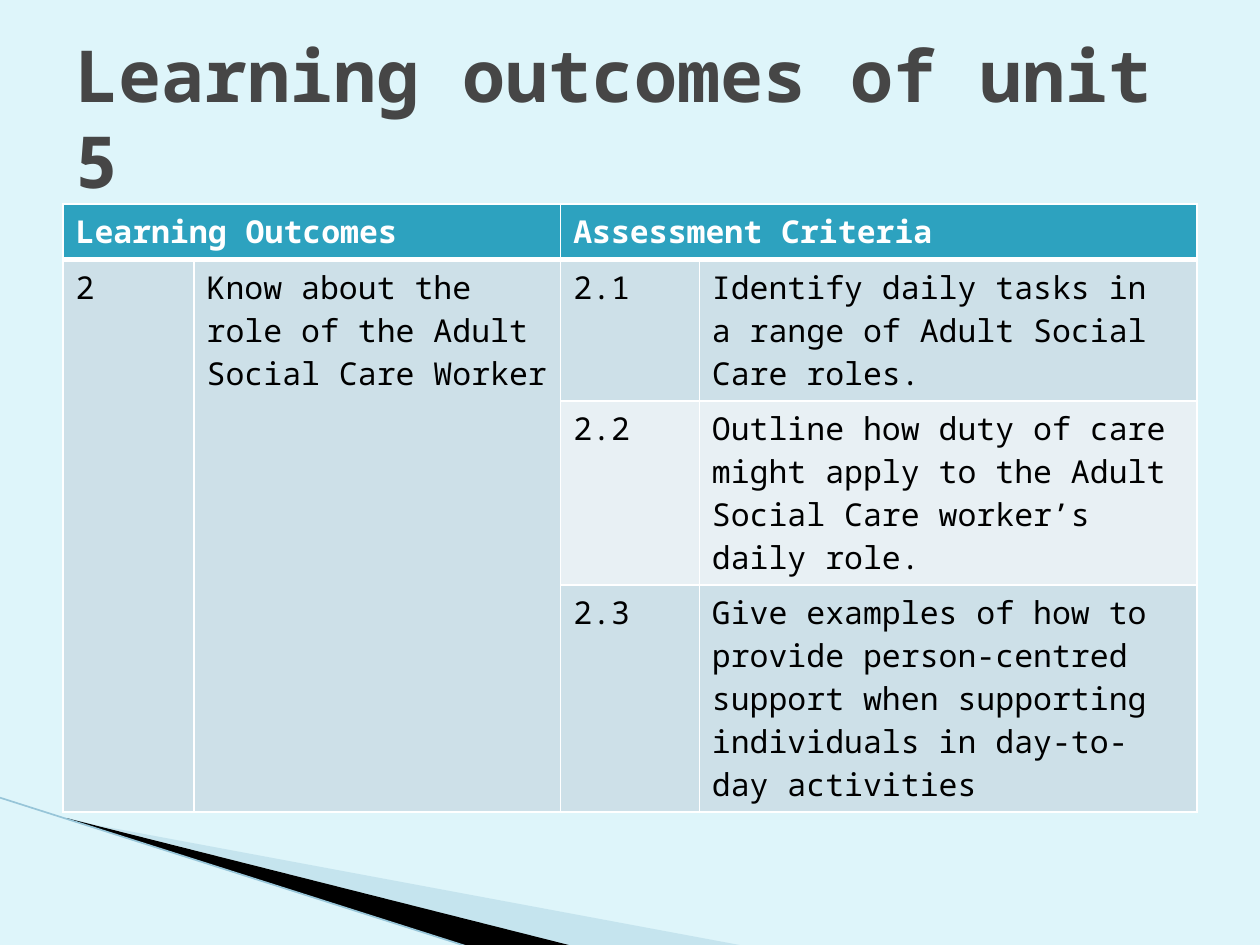
from lxml.etree import SubElement
from pptx import Presentation
from pptx.dml.color import RGBColor
from pptx.enum.shapes import MSO_CONNECTOR as Connector
from pptx.enum.text import MSO_ANCHOR as Anchor
from pptx.oxml import parse_xml
from pptx.oxml.ns import nsdecls, qn
from pptx.util import Pt

BACKGROUND = RGBColor(0xDE, 0xF5, 0xFA)
PALE_WEDGE = RGBColor(0xA0, 0xCB, 0xDC)
EDGE = RGBColor(0x97, 0xC5, 0xD8)
TEAL = RGBColor(0x2D, 0xA2, 0xBF)
BAND_DARK = RGBColor(0xCD, 0xE0, 0xE8)
BAND_LIGHT = RGBColor(0xE8, 0xF0, 0xF4)
GREY = RGBColor(0x46, 0x46, 0x46)
BLACK = RGBColor(0, 0, 0)
WHITE = RGBColor(0xFF, 0xFF, 0xFF)

FONT = "Noto Sans Mono"
TITLE_FORMAT = {"name": FONT, "size": Pt(41), "bold": True}
HEADER_FORMAT = {"name": FONT, "size": Pt(18), "bold": True}
BODY_FORMAT = {"name": FONT, "size": Pt(18), "bold": False}

COLUMN_WIDTHS = (74.9, 209.5, 79.2, 284.4)
ROW_HEIGHT = 29.2
ROWS = (
    ("Learning Outcomes", "", "Assessment Criteria", ""),
    ("2", "Know about the role of the Adult Social Care Worker",
     "2.1", "Identify daily tasks in a range of Adult Social Care roles."),
    ("", "", "2.2", "Outline how duty of care might apply to the Adult "
     "Social Care worker’s daily role."),
    ("", "", "2.3", "Give examples of how to provide person-centred support "
     "when supporting individuals in day-to-day activities"),
)
MERGES = (((0, 0), (0, 1)), ((0, 2), (0, 3)), ((1, 0), (3, 0)), ((1, 1), (3, 1)))


def write_text(frame, text, values, color):
    span = frame.paragraphs[0].add_run()
    span.text = text
    for name, value in values.items():
        setattr(span.font, name, value)
    span.font.color.rgb = color


def add_wedge(page, points, color, opacity=100):
    (x, y), *rest = points
    builder = page.shapes.build_freeform(Pt(x), Pt(y))
    builder.add_line_segments([(Pt(px), Pt(py)) for px, py in rest], close=True)
    wedge = builder.convert_to_shape()
    wedge.shadow.inherit = False
    wedge.fill.solid()
    wedge.fill.fore_color.rgb = color
    wedge.line.fill.background()
    if opacity < 100:
        srgb = wedge.fill._xPr.find(".//" + qn("a:srgbClr"))
        SubElement(srgb, qn("a:alpha"), val=str(opacity * 1000))


def add_corner(page, left, top, width, height):
    """Draw the wedges and edge line that sweep across the bottom left."""
    bottom = top + height
    add_wedge(page, ((left + 40, top + 13), (left + 429, bottom),
                     (left + 329, bottom), (left + 40, top + 12)), PALE_WEDGE, 40)
    add_wedge(page, ((left + 39, top + 12), (left + 330, bottom),
                     (left + 268.5, bottom), (left + 39.5, top + 12.5)), BLACK)
    edge = page.shapes.add_connector(Connector.STRAIGHT, Pt(left), Pt(top),
                                     Pt(left + width), Pt(bottom))
    edge.line.color.rgb = EDGE
    edge.line.width = Pt(0.95)
    SubElement(edge._element.spPr, qn("a:effectLst"))


def add_title(page, left, top, width, height):
    box = page.shapes.add_textbox(Pt(left), Pt(top), Pt(width), Pt(height))
    box.text_frame.word_wrap = True
    box.text_frame.vertical_anchor = Anchor.MIDDLE
    write_text(box.text_frame, "Learning outcomes of unit 5", TITLE_FORMAT, GREY)


def set_borders(cell, widths):
    properties = cell._tc.get_or_add_tcPr()
    for index, (side, width) in enumerate(widths.items()):
        properties.insert(index, parse_xml(
            f'<a:ln{side} {nsdecls("a")} w="{Pt(width)}"><a:solidFill>'
            f'<a:srgbClr val="{WHITE}"/></a:solidFill></a:ln{side}>'))


def add_outcomes_table(page, left, top, width, height):
    frame = page.shapes.add_table(len(ROWS), len(COLUMN_WIDTHS), Pt(left), Pt(top),
                                  Pt(width), Pt(height))
    table = frame.table
    for column, column_width in zip(table.columns, COLUMN_WIDTHS):
        column.width = Pt(column_width)
    for row_index, texts in enumerate(ROWS):
        table.rows[row_index].height = Pt(ROW_HEIGHT)
        header = row_index == 0
        band = TEAL if header else BAND_DARK if row_index % 2 else BAND_LIGHT
        for column_index, text in enumerate(texts):
            cell = table.cell(row_index, column_index)
            cell.fill.solid()
            cell.fill.fore_color.rgb = band
            set_borders(cell, {"L": 1, "R": 1, "T": 3 if row_index == 1 else 1,
                               "B": 3 if header else 1})
            if text:
                write_text(cell.text_frame, text,
                           HEADER_FORMAT if header else BODY_FORMAT,
                           WHITE if header else BLACK)
    for first, last in MERGES:
        table.cell(*first).merge(table.cell(*last))
    frame.height = Pt(height)


def main():
    deck = Presentation()
    deck.slide_width, deck.slide_height = Pt(720), Pt(540)
    page = deck.slides.add_slide(deck.slide_layouts[6])
    page.background.fill.solid()
    page.background.fill.fore_color.rgb = BACKGROUND
    add_corner(page, -1, 455.5, 268.5, 85.5)
    add_outcomes_table(page, 36, 116.6, 648, 267)
    add_title(page, 36, 21.6, 648, 90)
    deck.save("out.pptx")


if __name__ == "__main__":
    main()
